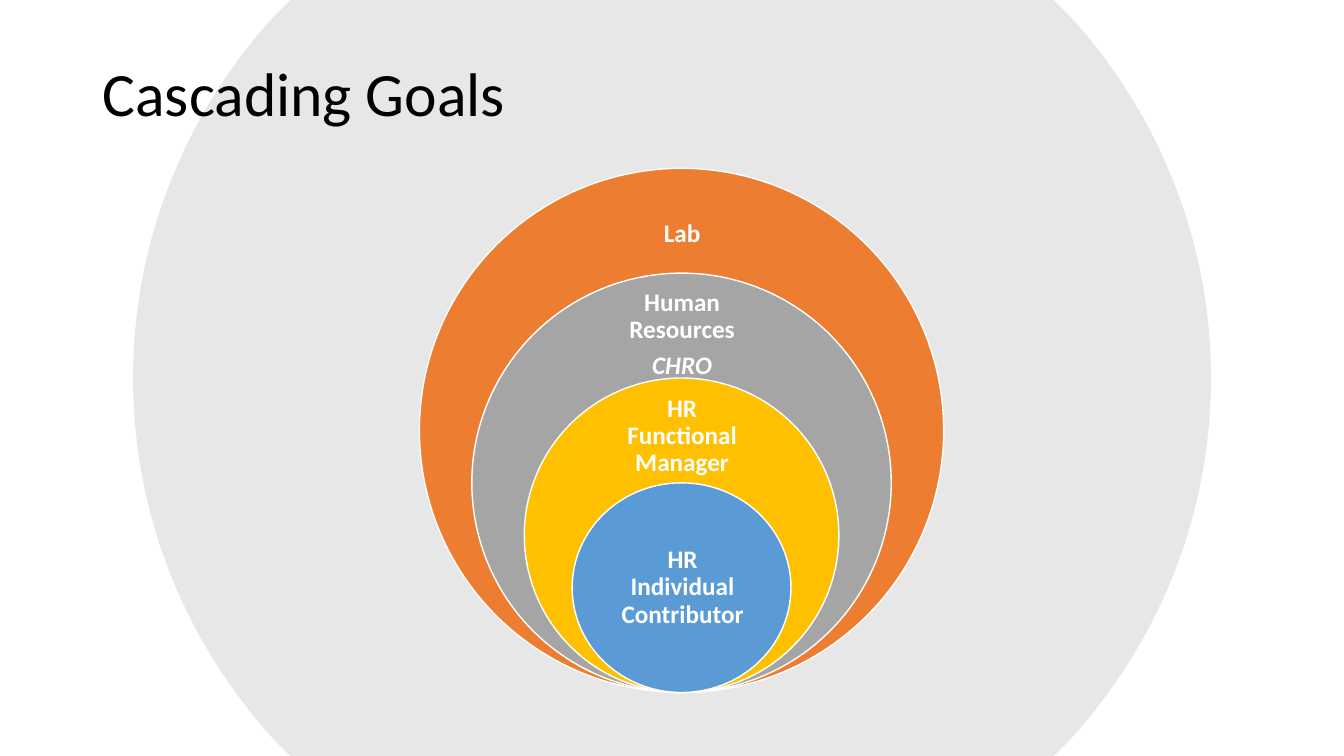
import pptx
import pptx.dml.color
import pptx.enum.shapes
import pptx.enum.text
import pptx.oxml.ns
import pptx.util
from lxml import etree

Inches = pptx.util.Inches
qn = pptx.oxml.ns.qn

COLORS = {
    "backdrop": "D9D9D9",
    "title": "000000",
    "white": "FFFFFF",
    "lab": "ED7D31",
    "resources": "A5A5A5",
    "manager": "FFC000",
    "contributor": "5B9BD5",
}
TITLE = "Cascading Goals"
LEVELS = [
    {"color": "lab", "lines": [("Lab", False)], "width": 5.2, "label": (6.04, 1.93, 1.45, 0.78)},
    {"color": "resources", "lines": [("Human Resources", False), ("CHRO", True)],
     "width": 4.16, "label": (6.04, 2.95, 1.45, 0.75)},
    {"color": "manager", "lines": [("HR Functional Manager", False)],
     "width": 3.12, "label": (6.04, 3.98, 1.45, 0.7)},
    {"color": "contributor", "lines": [("HR Individual Contributor", False)],
     "width": 2.17, "label": (6, 5.31, 1.54, 1.04)},
]
BACKDROP_START = (2.88, 0)
BACKDROP_SEGMENTS = [
    [(10.45, 0)],
    [(10.62, 0.17)],
    [(11.48, 1.12), (12.01, 2.37), (12.01, 3.75)],
    [(12.01, 5.13), (11.48, 6.38), (10.62, 7.33)],
    [(10.45, 7.5)],
    [(2.88, 7.5)],
    [(2.71, 7.33)],
    [(1.85, 6.38), (1.32, 5.13), (1.32, 3.75)],
    [(1.32, 2.37), (1.85, 1.12), (2.71, 0.17)],
]
LARGEST_HEIGHT, HEIGHT_STEP = 5.2, 1.04
CIRCLES_CENTER, CIRCLES_BOTTOM = 6.76, 6.87


def rgb(name):
    return pptx.dml.color.RGBColor.from_string(COLORS[name])


def add_text(slide, box, lines, size, color, bold=False, align="LEFT", inset=(0.1, 0.05), after=0):
    shape = slide.shapes.add_textbox(*map(Inches, box))
    frame = shape.text_frame
    frame.word_wrap = True
    frame.vertical_anchor = pptx.enum.text.MSO_ANCHOR.MIDDLE
    frame.margin_left = frame.margin_right = Inches(inset[0])
    frame.margin_top = frame.margin_bottom = Inches(inset[1])
    for index, (text, italic) in enumerate(lines):
        paragraph = frame.add_paragraph() if index else frame.paragraphs[0]
        paragraph.alignment = pptx.enum.text.PP_ALIGN[align]
        paragraph.line_spacing = 0.9
        paragraph.space_after = pptx.util.Pt(after)
        run = paragraph.add_run()
        run.text = text
        run.font.name = "Calibri"
        run.font.size = pptx.util.Pt(size)
        run.font.bold = bold
        run.font.italic = italic
        run.font.color.rgb = rgb(color)


def add_backdrop(slide):
    builder = slide.shapes.build_freeform(*map(Inches, BACKDROP_START), scale=1.0)
    points = [point for segment in BACKDROP_SEGMENTS for point in segment]
    builder.add_line_segments([(Inches(x), Inches(y)) for x, y in points], close=True)
    shape = builder.convert_to_shape()
    shape.shadow.inherit = False
    shape.fill.solid()
    shape.fill.fore_color.rgb = rgb("backdrop")
    shape.line.fill.background()
    color = shape.element.spPr.find(qn("a:solidFill")).find(qn("a:srgbClr"))
    etree.SubElement(color, qn("a:alpha"), val="62000")

    line_elements = iter(list(shape.element.iter(qn("a:lnTo"))))
    for segment in BACKDROP_SEGMENTS:
        elements = [next(line_elements) for point in segment]
        if len(elements) == 3:
            curve = etree.Element(qn("a:cubicBezTo"))
            elements[0].addprevious(curve)
            for element in elements:
                curve.append(element[0])
                element.getparent().remove(element)


def add_level(slide, index, level):
    height = LARGEST_HEIGHT - index * HEIGHT_STEP
    width = level["width"]
    box = (CIRCLES_CENTER - width / 2, CIRCLES_BOTTOM - height, width, height)
    circle = slide.shapes.add_shape(pptx.enum.shapes.MSO_SHAPE.OVAL, *map(Inches, box))
    circle.shadow.inherit = False
    circle.fill.solid()
    circle.fill.fore_color.rgb = rgb(level["color"])
    circle.line.color.rgb = rgb("white")
    circle.line.width = pptx.util.Pt(1)
    add_text(slide, level["label"], level["lines"], 18, "white", bold=True,
             align="CENTER", inset=(0.14, 0.14), after=6.3)


def main():
    presentation = pptx.Presentation()
    presentation.slide_width = Inches(13.33)
    presentation.slide_height = Inches(7.5)
    slide = presentation.slides.add_slide(presentation.slide_layouts[6])
    add_backdrop(slide)
    add_text(slide, (0.92, 0.23, 11.5, 1.45), [(TITLE, False)], 44, "title")
    for index, level in enumerate(LEVELS):
        add_level(slide, index, level)
    presentation.save("out.pptx")


if __name__ == "__main__":
    main()
